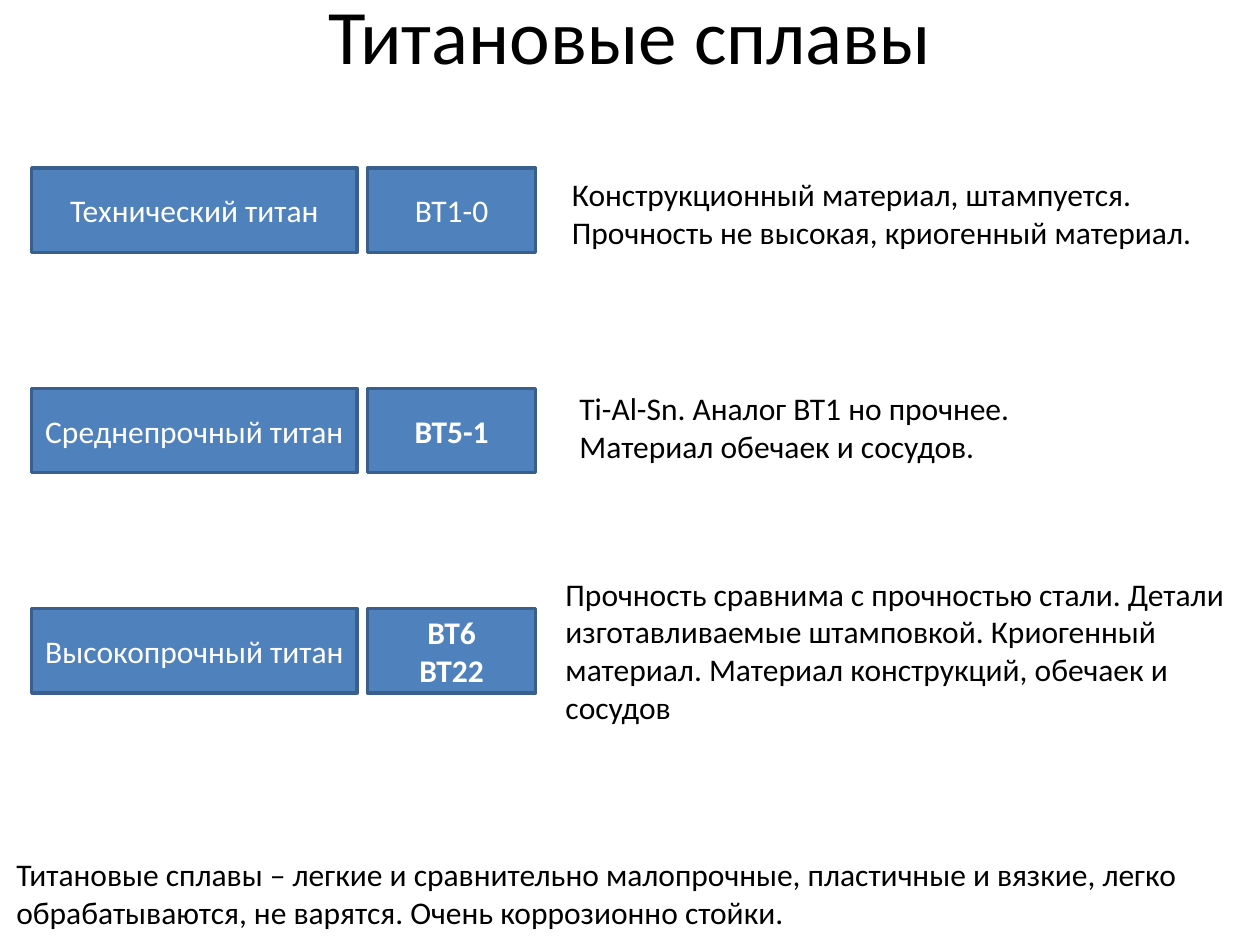
"""Build a slide that compares titanium alloys by strength grade."""

from dataclasses import dataclass

import pptx
import pptx.dml.color
import pptx.enum.shapes
import pptx.enum.text
import pptx.util

Cm = pptx.util.Cm
COLORS = {"box": "4F81BD", "border": "3A5F8C", "light": "FFFFFF", "dark": "000000"}
FONT = "Calibri"
FIRST_ROW_TOP = 3.39
ROW_PITCH = 4.44
BOX_HEIGHT = 1.7
GRADE_LEFT, GRADE_WIDTH = 0.64, 6.56
MARK_LEFT, MARK_WIDTH = 7.41, 3.39


@dataclass
class Box:
    """Position and size in centimetres."""

    left: float
    top: float
    width: float
    height: float

    def lengths(self) -> tuple:
        """Return the four values as slide lengths."""
        return Cm(self.left), Cm(self.top), Cm(self.width), Cm(self.height)


@dataclass
class Alloy:
    """One row: a grade, its marks and a description."""

    grade: str
    marks: list[str]
    bold_marks: bool
    description: str
    description_box: Box


ALLOYS = [
    Alloy("Технический титан", ["ВТ1-0"], False,
          "Конструкционный материал, штампуется. "
          "Прочность не высокая, криогенный материал.",
          Box(11.28, 3.4, 14.17, 1.8)),
    Alloy("Среднепрочный титан", ["ВТ5-1"], True,
          "Ti-Al-Sn. Аналог ВТ1 но прочнее. Материал обечаек и сосудов.",
          Box(11.43, 7.72, 11.43, 1.8)),
    Alloy("Высокопрочный титан", ["ВТ6", "ВТ22"], True,
          "Прочность сравнима с прочностью стали. Детали изготавливаемые "
          "штамповкой. Криогенный материал. Материал конструкций, обечаек и сосудов",
          Box(11.15, 11.46, 14.25, 3.33)),
]
SUMMARY = ("Титановые сплавы – легкие и сравнительно малопрочные, пластичные и вязкие, "
           "легко обрабатываются, не варятся. Очень коррозионно стойки.")


def rgb(name: str) -> pptx.dml.color.RGBColor:
    """Look up a palette colour."""
    return pptx.dml.color.RGBColor.from_string(COLORS[name])


def write_lines(text_frame, lines: list[str], color: str, size: int = 18,
                bold: bool = False, centered: bool = False) -> None:
    """Write one paragraph per line."""
    text_frame.word_wrap = True
    for index, line in enumerate(lines):
        paragraph = text_frame.add_paragraph() if index else text_frame.paragraphs[0]
        if centered:
            paragraph.alignment = pptx.enum.text.PP_ALIGN.CENTER
        run = paragraph.add_run()
        run.text = line
        run.font.name = FONT
        run.font.size = pptx.util.Pt(size)
        run.font.bold = bold
        run.font.color.rgb = rgb(color)


def add_label(slide, box: Box, lines: list[str], bold: bool = False) -> None:
    """Draw a filled rectangle with centred text."""
    shape = slide.shapes.add_shape(
        pptx.enum.shapes.MSO_SHAPE.RECTANGLE, *box.lengths())
    shape.shadow.inherit = False
    shape.fill.solid()
    shape.fill.fore_color.rgb = rgb("box")
    shape.line.color.rgb = rgb("border")
    shape.line.width = pptx.util.Pt(2)
    shape.text_frame.vertical_anchor = pptx.enum.text.MSO_ANCHOR.MIDDLE
    write_lines(shape.text_frame, lines, "light", bold=bold, centered=True)


def add_note(slide, box: Box, text: str) -> None:
    """Add a plain wrapped text box."""
    shape = slide.shapes.add_textbox(*box.lengths())
    write_lines(shape.text_frame, [text], "dark")
    shape.text_frame.auto_size = pptx.enum.text.MSO_AUTO_SIZE.SHAPE_TO_FIT_TEXT


def add_title(slide, box: Box, text: str) -> None:
    """Move and fill the title placeholder."""
    title = slide.shapes.title
    title.left, title.top, title.width, title.height = box.lengths()
    title.text_frame.vertical_anchor = pptx.enum.text.MSO_ANCHOR.MIDDLE
    write_lines(title.text_frame, [text], "dark", size=44, centered=True)
    title.text_frame.auto_size = pptx.enum.text.MSO_AUTO_SIZE.NONE


def main() -> None:
    """Build and save the presentation."""
    presentation = pptx.Presentation()
    presentation.slide_width, presentation.slide_height = Cm(25.4), Cm(19.05)
    slide = presentation.slides.add_slide(presentation.slide_layouts[5])
    add_title(slide, Box(1.27, -0.43, 22.86, 2.21), "Титановые сплавы")
    for index, alloy in enumerate(ALLOYS):
        top = FIRST_ROW_TOP + index * ROW_PITCH
        add_label(slide, Box(GRADE_LEFT, top, GRADE_WIDTH, BOX_HEIGHT), [alloy.grade])
        add_label(slide, Box(MARK_LEFT, top, MARK_WIDTH, BOX_HEIGHT),
                  alloy.marks, alloy.bold_marks)
        add_note(slide, alloy.description_box, alloy.description)
    add_note(slide, Box(0.08, 17.12, 24.87, 1.8), SUMMARY)
    presentation.save("out.pptx")


if __name__ == "__main__":
    main()
